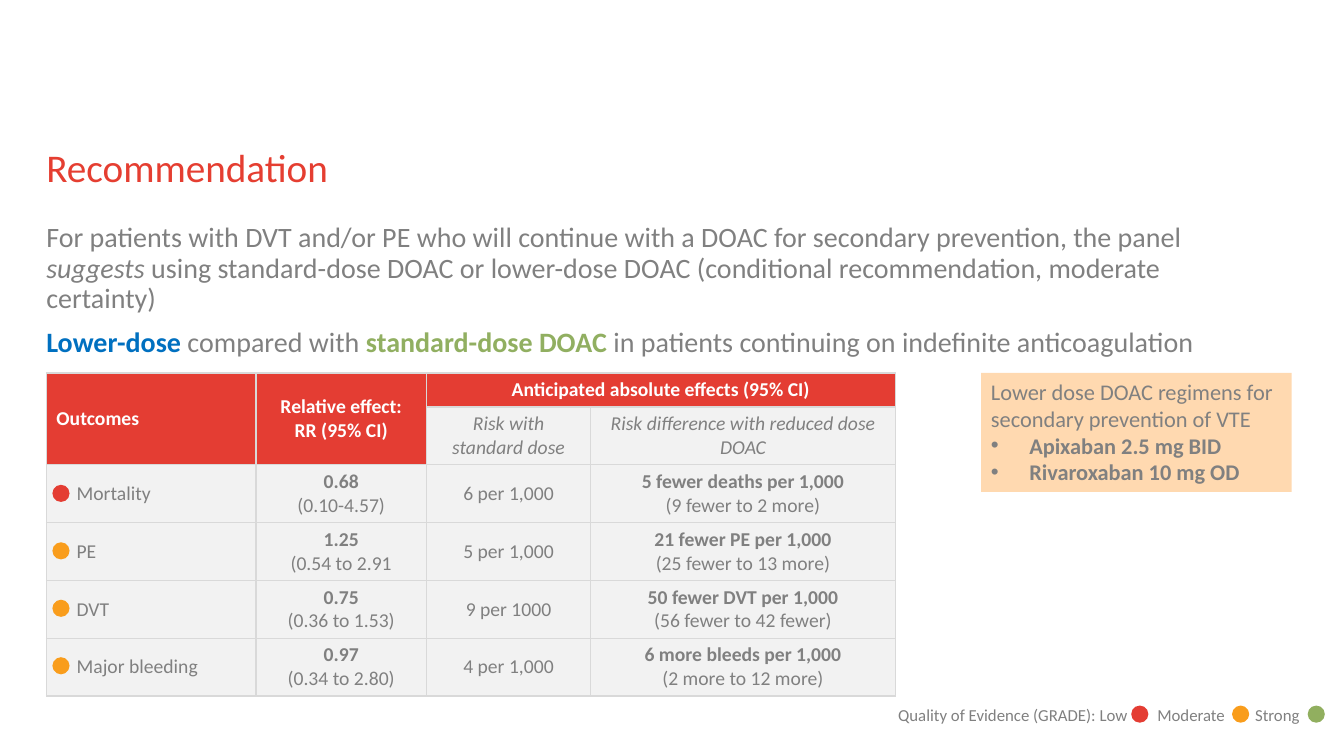
"""Build the slide on standard-dose and lower-dose DOAC."""
from pptx import Presentation
from pptx.dml.color import RGBColor
from pptx.enum.shapes import MSO_SHAPE
from pptx.enum.text import MSO_ANCHOR, MSO_AUTO_SIZE, PP_ALIGN
from pptx.oxml import parse_xml
from pptx.oxml.ns import nsdecls
from pptx.util import Pt

PX = 9144
GREY, RED, AMBER, GREEN = "808080", "E43D33", "F99D1C", "91AF5F"


def write(para, text, size=14, color=GREY, bold=False, italic=False):
    run = para.add_run()
    run.text = text
    font = run.font
    font.name, font.size, font.bold, font.italic = "Calibri", Pt(size), bold, italic
    font.color.rgb = RGBColor.from_string(color)


def draw(shapes, kind, box, color):
    shape = shapes.add_shape(kind, *[n * PX for n in box])
    shape.shadow.inherit = False
    shape.fill.solid()
    shape.fill.fore_color.rgb = RGBColor.from_string(color)
    shape.line.fill.background()
    return shape


deck = Presentation()
deck.slide_width, deck.slide_height = 1333 * PX, 750 * PX
slide = deck.slides.add_slide(deck.slide_layouts[5])
shapes = slide.shapes

title = shapes.title
title.left, title.top, title.width, title.height = 46 * PX, 147 * PX, 1200 * PX, 46 * PX
body = shapes.add_textbox(46 * PX, 222 * PX, 1200 * PX, 432 * PX)
for frame in (title.text_frame, body.text_frame):
    frame.margin_left = frame.margin_top = frame.margin_right = frame.margin_bottom = 0
    frame.word_wrap = True
    frame.auto_size = MSO_AUTO_SIZE.NONE
    frame.vertical_anchor = MSO_ANCHOR.TOP
    frame.paragraphs[0].alignment = PP_ALIGN.LEFT
    frame.paragraphs[0].line_spacing = 0.9
write(title.text_frame.paragraphs[0], "Recommendation", size=28, color="E53E31")

para = body.text_frame.paragraphs[0]
write(para, "For patients with DVT and/or PE who will continue with a DOAC "
      "for secondary prevention, the panel ", size=20)
write(para, "suggests", size=20, italic=True)
write(para, " using standard-dose DOAC or lower-dose DOAC "
      "(conditional recommendation, moderate certainty)", size=20)
para = body.text_frame.add_paragraph()
para.line_spacing = 0.9
para.space_before = Pt(10)
write(para, "Lower-dose ", size=20, color="0070C0", bold=True)
write(para, "compared with ", size=20)
write(para, "standard-dose DOAC ", size=20, color="91AF61", bold=True)
write(para, "in patients continuing on indefinite anticoagulation", size=20)

rows = [
    ["Outcomes", "Relative effect:\nRR (95% CI)", "Anticipated absolute effects (95% CI)", ""],
    ["", "", "Risk with standard dose", "Risk difference with reduced dose DOAC"],
    ["Mortality", "0.68\n(0.10-4.57)", "6 per 1,000",
     "5 fewer deaths per 1,000\n(9 fewer to 2 more)"],
    ["PE", "1.25\n(0.54 to 2.91", "5 per 1,000",
     "21 fewer PE per 1,000\n(25 fewer to 13 more)"],
    ["DVT", "0.75\n(0.36 to 1.53)", "9 per 1000",
     "50 fewer DVT per 1,000\n(56 fewer to 42 fewer)"],
    ["Major bleeding", "0.97\n(0.34 to 2.80)", "4 per 1,000",
     "6 more bleeds per 1,000\n(2 more to 12 more)"],
]
table = shapes.add_table(6, 4, 46 * PX, 370 * PX, 842 * PX, 317 * PX).table
table.first_row = table.horz_banding = False
for col, width in zip(table.columns, (208, 169, 163, 302)):
    col.width = width * PX
for row, height in zip(table.rows, [32] + [57] * 5):
    row.height = height * PX
for first, last in (((0, 0), (1, 0)), ((0, 1), (1, 1)), ((0, 2), (0, 3))):
    table.cell(*first).merge(table.cell(*last))

for r, row in enumerate(rows):
    for c, text in enumerate(row):
        cell = table.cell(r, c)
        head = r == 0 or (r == 1 and c < 2)
        cell.vertical_anchor = MSO_ANCHOR.MIDDLE
        if r > 1 and c == 0:
            cell.margin_left = 30 * PX
        for side in "LRTB":
            cell._tc.get_or_add_tcPr().append(parse_xml(
                f'<a:ln{side} {nsdecls("a")} w="12700"><a:solidFill>'
                f'<a:srgbClr val="D9D9D9"/></a:solidFill></a:ln{side}>'))
        cell.fill.solid()
        cell.fill.fore_color.rgb = RGBColor.from_string(RED if head else "F2F2F2")
        if not text:
            continue
        for i, line in enumerate(text.split("\n")):
            para = cell.text_frame.paragraphs[0] if i == 0 else cell.text_frame.add_paragraph()
            para.alignment = PP_ALIGN.CENTER if c else PP_ALIGN.LEFT
            write(para, line, color="FFFFFF" if head else GREY,
                  bold=head or (r > 1 and c in (1, 3) and i == 0), italic=r == 1)

legend = shapes.add_group_shape().shapes
label = legend.add_textbox(881 * PX, 694 * PX, 453 * PX, 30 * PX)
label.text_frame.word_wrap = True
para = label.text_frame.paragraphs[0]
para._p.get_or_add_pPr().append(parse_xml(
    f'<a:tabLst {nsdecls("a")}><a:tab pos="{257 * PX}" algn="l"/>'
    f'<a:tab pos="{354 * PX}" algn="l"/></a:tabLst>'))
write(para, "Quality of Evidence (GRADE): Low\tModerate\tStrong", size=12)
for x, color in ((1122, RED), (1222, AMBER), (1297, GREEN)):
    draw(legend, MSO_SHAPE.OVAL, (x, 700, 17, 17), color)

for i, color in enumerate((RED, AMBER, AMBER, AMBER)):
    draw(shapes, MSO_SHAPE.OVAL, (52, 481 + 57 * i, 17, 17), color)

note = draw(shapes, MSO_SHAPE.RECTANGLE, (973, 370, 308, 118), "FFD9B0").text_frame
note.word_wrap = True
note.vertical_anchor = MSO_ANCHOR.TOP
para = note.paragraphs[0]
para.alignment = PP_ALIGN.LEFT
write(para, "Lower dose DOAC regimens for secondary prevention of VTE", size=16)
for drug in ("Apixaban 2.5 mg BID", "Rivaroxaban 10 mg OD"):
    para = note.add_paragraph()
    para.alignment = PP_ALIGN.LEFT
    props = para._p.get_or_add_pPr()
    props.set("marL", str(38 * PX))
    props.set("indent", str(-38 * PX))
    props.append(parse_xml(f'<a:buFont {nsdecls("a")} typeface="Arial"/>'))
    props.append(parse_xml(f'<a:buChar {nsdecls("a")} char="•"/>'))
    write(para, drug, size=16, bold=True)

deck.save("out.pptx")
